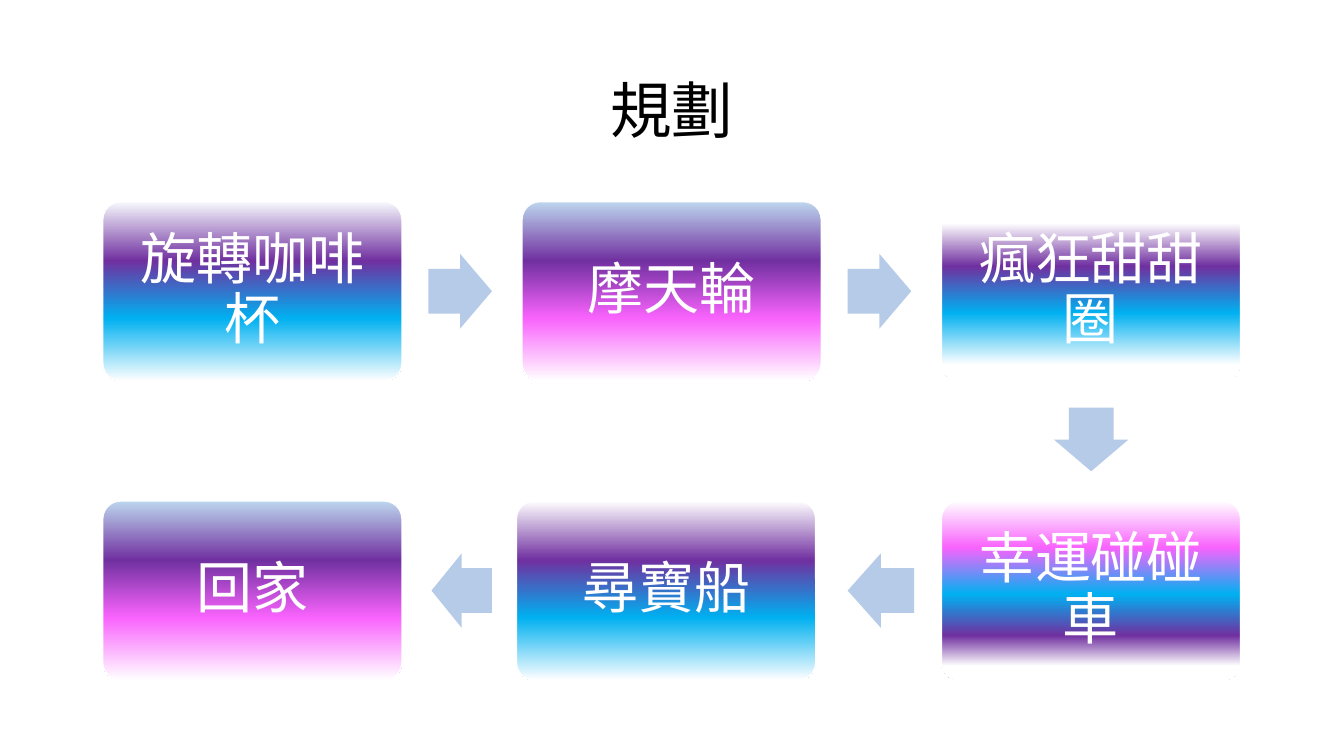
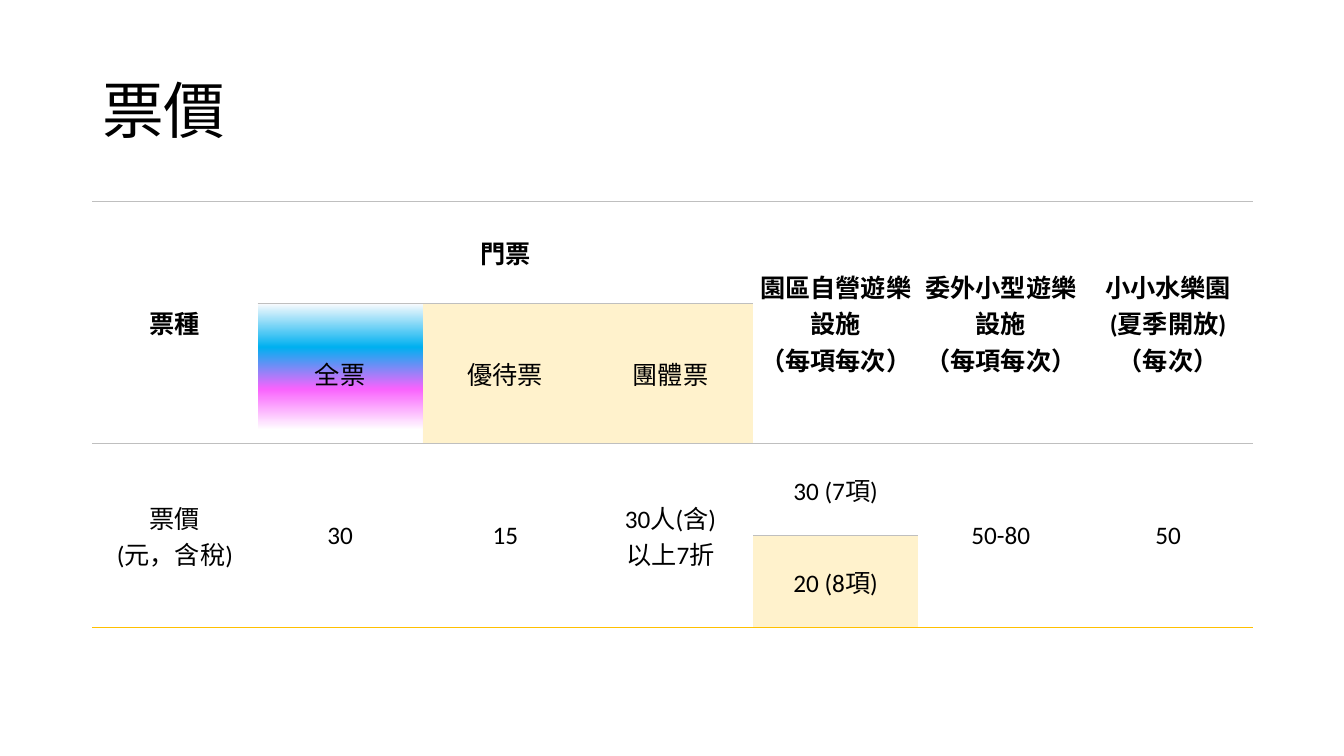
"""Build a ride plan and a ticket price table as two slides."""
import pptx
import pptx.dml.color
import pptx.enum.shapes
import pptx.enum.text
import pptx.oxml.ns
import pptx.util
from lxml import etree

Pt = pptx.util.Pt
RGB = pptx.dml.color.RGBColor
SHAPE = pptx.enum.shapes.MSO_SHAPE
ALIGN = pptx.enum.text.PP_ALIGN
MIDDLE = pptx.enum.text.MSO_ANCHOR.MIDDLE
qn = pptx.oxml.ns.qn

BLACK = RGB(0x00, 0x00, 0x00)
WHITE = RGB(0xFF, 0xFF, 0xFF)
FROST = RGB(0xF7, 0xFA, 0xFD)
PALE = RGB(0xBD, 0xD7, 0xEE)
PURPLE = RGB(0x70, 0x30, 0xA0)
AZURE = RGB(0x00, 0xB0, 0xF0)
PINK = RGB(0xF9, 0x63, 0xFD)
STEEL = RGB(0xB5, 0xCB, 0xE7)
CREAM = RGB(0xFF, 0xF2, 0xCC)
GREY = RGB(0xBF, 0xBF, 0xBF)
GOLD = RGB(0xFF, 0xC0, 0x00)

FONT = "Calibri"
PLAIN = "{2D5ABB26-0587-4C30-8999-92F81FD0307C}"
TITLE = {"size": Pt(44), "name": FONT}
RIDE = {"size": Pt(40), "name": FONT}
CELL = {"size": Pt(18), "name": FONT}

LEFT, TOP = 66, 144
BOX_X, BOX_W, BOX_H = 73.4, 213.8, 128.2
STEP_X, STEP_Y = 299.5, 213.8
ARROW_H = 53.3

SEA = [(0, FROST), (33, PURPLE), (65, AZURE), (100, WHITE)]
ROSE = [(0, PALE), (33, PURPLE), (65, PINK), (100, WHITE)]
RING = [(12, WHITE), (36, PURPLE), (62, AZURE), (91, WHITE)]
CAR = [(0, WHITE), (26, PINK), (52, AZURE), (75, PURPLE), (92, WHITE)]
SHIP = [(0, WHITE)] + SEA[1:]
FULL = [(0, FROST), (31, AZURE), (61, PINK), (90, WHITE)]

RIDES = [
    (0, 0, 0, "旋轉咖啡杯", SEA),
    (1, 0, 0, "摩天輪", ROSE),
    (2, 0, 0, "瘋狂甜甜圈", RING),
    (2, 1, 0, "幸運碰碰車", CAR),
    (1, 1, -4, "尋寶船", SHIP),
    (0, 1, 0, "回家", ROSE),
]
ARROWS = [
    (306, 181.4, 45.4, 0),
    (605.5, 181.4, 45.4, 0),
    (756.7, 287.3, 45.4, 90),
    (605.5, 395.2, 47.5, 180),
    (308.2, 395.2, 43.2, 180),
]

COLS = [118] * 6 + [121]
ROWS = [73, 100, 65.5, 65.5]
SPANS = [(0, 1, 0, 3)] + [(0, c, 1, c) for c in (0, 4, 5, 6)]
SPANS += [(2, c, 3, c) for c in (0, 1, 2, 3, 5, 6)]
WORDS = {
    (0, 0): "票種",
    (0, 1): "門票",
    (0, 4): "園區自營遊樂設施\v（每項每次）",
    (0, 5): "委外小型遊樂設施\v（每項每次）",
    (0, 6): "小小水樂園\v(夏季開放)\v（每次）",
    (1, 1): "全票",
    (1, 2): "優待票",
    (1, 3): "團體票",
    (2, 0): "票價\v(元，含稅)",
    (2, 1): "30",
    (2, 2): "15",
    (2, 3): "30人(含)\v以上7折",
    (2, 4): "30 (7項)",
    (2, 5): "50-80",
    (2, 6): "50",
    (3, 4): "20 (8項)",
}
TINTS = [(1, 2), (1, 3), (3, 4)]
RULES = {(0, c) for c in range(7)} | {(1, c) for c in (1, 2, 3)}
RULES |= {(2, c) for c in (0, 4, 5, 6)}


def apply(item, form):
    """Set each value of a format dict on an item."""
    for key, value in form.items():
        setattr(item, key, value)


def write(frame, text, form, color, align, space=0.9):
    """Put one styled paragraph in a text frame."""
    frame.text = text
    para = frame.paragraphs[0]
    apply(para, {"alignment": align, "line_spacing": space})
    for run in para.runs:
        apply(run.font, form)
        run.font.color.rgb = color


def shade(fill, node, stops):
    """Fill downward through a list of colour stops."""
    fill.gradient()
    fill.gradient_angle = 270
    stack = node.find(qn("a:gradFill")).find(qn("a:gsLst"))
    for old in list(stack):
        stack.remove(old)
    for place, color in stops:
        stop = etree.SubElement(stack, qn("a:gs"), pos=str(place * 1000))
        etree.SubElement(stop, qn("a:srgbClr"), val=str(color))


def title(slide, text, align):
    """Add the slide title."""
    box = slide.shapes.add_textbox(Pt(LEFT), Pt(29), Pt(828), Pt(104.4))
    apply(box.text_frame, {"word_wrap": True, "vertical_anchor": MIDDLE})
    write(box.text_frame, text, TITLE, BLACK, align)


def ride(slide, col, row, shift, text, stops):
    """Add one ride box on the grid."""
    box = slide.shapes.add_shape(
        SHAPE.ROUNDED_RECTANGLE, Pt(BOX_X + col * STEP_X + shift),
        Pt(TOP + row * STEP_Y), Pt(BOX_W), Pt(BOX_H))
    box.shadow.inherit = False
    box.adjustments[0] = 0.1
    shade(box.fill, box._element.spPr, stops)
    box.line.color.rgb = WHITE
    box.line.width = Pt(1)
    sides = ("left", "right", "top", "bottom")
    form = {"margin_" + side: Pt(16) for side in sides}
    apply(box.text_frame, form | {"word_wrap": True, "vertical_anchor": MIDDLE})
    write(box.text_frame, text, RIDE, WHITE, ALIGN.CENTER)


def arrow(slide, left, top, width, turn):
    """Add one block arrow, turned clockwise."""
    item = slide.shapes.add_shape(
        SHAPE.RIGHT_ARROW, Pt(left), Pt(top), Pt(width), Pt(ARROW_H))
    item.shadow.inherit = False
    item.rotation = turn
    item.adjustments[0] = 0.6
    item.adjustments[1] = 0.5
    item.fill.solid()
    item.fill.fore_color.rgb = STEEL
    item.line.fill.background()


def rule(cell, side, color):
    """Draw one edge of a cell."""
    line = etree.Element(qn("a:" + side), w=str(Pt(1)))
    solid = etree.SubElement(line, qn("a:solidFill"))
    etree.SubElement(solid, qn("a:srgbClr"), val=str(color))
    cell._tc.get_or_add_tcPr().insert(0, line)


def dress(cell, spot):
    """Set the fill, edges and text of a cell."""
    row, col = spot
    apply(cell, {"margin_left": Pt(2), "margin_right": Pt(2),
                 "margin_top": Pt(2), "margin_bottom": Pt(2),
                 "vertical_anchor": MIDDLE})
    if spot == (1, 1):
        shade(cell.fill, cell._tc.tcPr, FULL)
    elif spot in TINTS:
        cell.fill.solid()
        cell.fill.fore_color.rgb = CREAM
    else:
        cell.fill.background()
    if row == 3 or (row == 2 and col != 4):
        rule(cell, "lnB", GOLD)
    if spot in RULES:
        rule(cell, "lnT", GREY)
    if spot in WORDS:
        form = CELL | {"bold": row == 0}
        write(cell.text_frame, WORDS[spot], form, BLACK, ALIGN.CENTER, 1.0)


def prices(slide):
    """Add the ticket price table."""
    frame = slide.shapes.add_table(
        len(ROWS), len(COLS), Pt(LEFT), Pt(TOP), Pt(sum(COLS)), Pt(sum(ROWS)))
    table = frame.table
    apply(table, {"first_row": False, "horz_banding": False})
    table._tbl.tblPr.find(qn("a:tableStyleId")).text = PLAIN
    for col, width in enumerate(COLS):
        table.columns[col].width = Pt(width)
    for row, height in enumerate(ROWS):
        table.rows[row].height = Pt(height)
    for top, left, bottom, right in SPANS:
        table.cell(top, left).merge(table.cell(bottom, right))
    for row in range(len(ROWS)):
        for col in range(len(COLS)):
            dress(table.cell(row, col), (row, col))


def main():
    """Build and save both slides."""
    deck = pptx.Presentation()
    apply(deck, {"slide_width": Pt(960), "slide_height": Pt(540)})
    blank = deck.slide_layouts[6]
    plan = deck.slides.add_slide(blank)
    title(plan, "規劃", ALIGN.CENTER)
    for item in RIDES:
        ride(plan, *item)
    for item in ARROWS:
        arrow(plan, *item)
    fees = deck.slides.add_slide(blank)
    title(fees, "票價", ALIGN.LEFT)
    prices(fees)
    deck.save("out.pptx")


if __name__ == "__main__":
    main()
